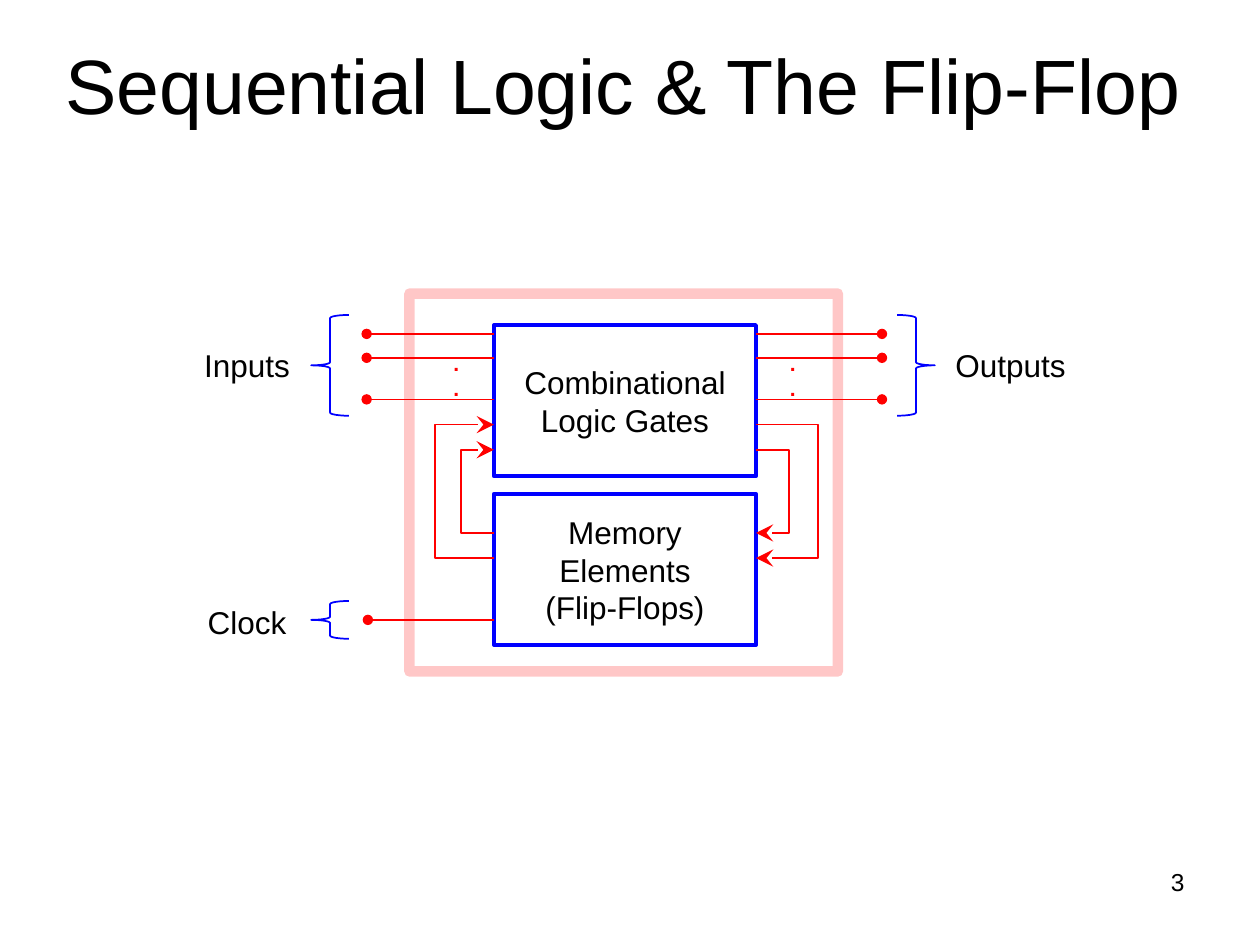
from dataclasses import dataclass

from lxml import etree
from pptx import Presentation
from pptx.dml.color import RGBColor
from pptx.enum import shapes, text
from pptx.oxml import ns
from pptx.util import Inches, Pt

BLACK, BLUE, RED = "000000", "0000FF", "FF0000"
MSO = shapes.MSO_SHAPE
CENTER, LEFT, RIGHT = text.PP_ALIGN.CENTER, text.PP_ALIGN.LEFT, text.PP_ALIGN.RIGHT
BLOCK_LEFT, BLOCK_WIDTH, BLOCK_HEIGHT = 3.92, 2.08, 1.2
BLOCK_RIGHT = BLOCK_LEFT + BLOCK_WIDTH


@dataclass
class Box:
    left: float
    top: float
    width: float
    height: float

    def emu(self) -> list:
        return [Inches(v) for v in (self.left, self.top, self.width, self.height)]


@dataclass
class Signal:
    label: str
    label_box: Box
    brace: MSO
    brace_box: Box
    block_x: float
    pin_x: float
    ys: tuple


@dataclass
class Feedback:
    block_x: float
    bend_x: float
    top: float
    bottom: float
    arrow_up: bool


def color(value: str) -> RGBColor:
    return RGBColor.from_string(value)


def write(tf, content: str, size=18, fill=BLACK, bold=False, align=CENTER,
          anchor=text.MSO_ANCHOR.TOP, wrap=True) -> None:
    tf.word_wrap = wrap
    tf.vertical_anchor = anchor
    for i, line in enumerate(content.split("\n")):
        p = tf.paragraphs[0] if i == 0 else tf.add_paragraph()
        p.alignment = align
        r = p.add_run()
        r.text = line
        r.font.name, r.font.size, r.font.bold = "Arial", Pt(size), bold
        r.font.color.rgb = color(fill)


def add_text(s, box: Box, content: str, **style) -> None:
    write(s.shapes.add_textbox(*box.emu()).text_frame, content, **style)


def add_outline(s, kind: MSO, box: Box, line: str, weight: float):
    sp = s.shapes.add_shape(kind, *box.emu())
    sp.shadow.inherit = False
    sp.fill.background()
    sp.line.color.rgb = color(line)
    sp.line.width = Pt(weight)
    return sp


def style_wire(sp, kind: str, size: str) -> None:
    sp.line.color.rgb = color(RED)
    sp.line.width = Pt(1)
    etree.SubElement(sp.line._get_or_add_ln(), ns.qn("a:tailEnd"),
                     type=kind, w=size, len=size)


def add_wire(s, block_x: float, pin_x: float, y: float) -> None:
    c = s.shapes.add_connector(shapes.MSO_CONNECTOR.STRAIGHT, Inches(block_x),
                               Inches(y), Inches(pin_x), Inches(y))
    style_wire(c, "oval", "med")
    etree.SubElement(c._element.spPr, ns.qn("a:effectLst"))


def add_signal(s, signal: Signal) -> None:
    add_outline(s, signal.brace, signal.brace_box, BLUE, 1)
    add_text(s, signal.label_box, signal.label)
    for y in signal.ys:
        add_wire(s, signal.block_x, signal.pin_x, y)


def add_feedback(s, loop: Feedback) -> None:
    start, end = (loop.bottom, loop.top) if loop.arrow_up else (loop.top, loop.bottom)
    path_points = [(loop.bend_x, start), (loop.bend_x, end), (loop.block_x, end)]
    builder = s.shapes.build_freeform(Inches(loop.block_x), Inches(start))
    builder.add_line_segments([(Inches(x), Inches(y)) for x, y in path_points],
                              close=False)
    sp = builder.convert_to_shape()
    sp.shadow.inherit = False
    sp.fill.background()
    style_wire(sp, "stealth", "lg")


def main() -> None:
    prs = Presentation()
    prs.slide_width, prs.slide_height = Inches(10), Inches(7.5)
    s = prs.slides.add_slide(prs.slide_layouts[5])

    title = s.shapes.title
    title.left, title.top, title.width, title.height = Box(-0.05, 0, 10, 1.33).emu()
    write(title.text_frame, "Sequential Logic & The Flip-Flop", size=44,
          anchor=text.MSO_ANCHOR.MIDDLE)
    add_text(s, Box(7.17, 6.83, 2.33, 0.52), "3", size=14, align=RIGHT)

    blocks = {2.58: "Combinational\nLogic Gates", 3.92: "Memory Elements\n(Flip-Flops)"}
    for top, label in blocks.items():
        sp = add_outline(s, MSO.RECTANGLE,
                         Box(BLOCK_LEFT, top, BLOCK_WIDTH, BLOCK_HEIGHT), BLUE, 2.25)
        write(sp.text_frame, label, anchor=text.MSO_ANCHOR.MIDDLE)

    data_ys = (2.65, 2.84, 3.17)
    signals = [
        Signal("Inputs", Box(1.5, 2.7, 0.92, 0.4), MSO.LEFT_BRACE,
               Box(2.47, 2.5, 0.3, 0.8), BLOCK_LEFT, 2.91, data_ys),
        Signal("Outputs", Box(7.43, 2.7, 1.18, 0.4), MSO.RIGHT_BRACE,
               Box(7.12, 2.5, 0.3, 0.8), BLOCK_RIGHT, 7, data_ys),
        Signal("Clock", Box(1.5, 4.74, 0.92, 0.4), MSO.LEFT_BRACE,
               Box(2.47, 4.77, 0.3, 0.3), BLOCK_LEFT, 2.92, (4.92,)),
    ]
    for signal in signals:
        add_signal(s, signal)
    for left in (3.5, 6.17):
        add_text(s, Box(left, 2.73, 0.25, 0.5), ".\n.", size=12, fill=RED,
                 bold=True, align=LEFT, wrap=False)

    loops = [
        Feedback(BLOCK_LEFT, 3.66, 3.57, 4.23, True),
        Feedback(BLOCK_LEFT, 3.45, 3.37, 4.43, True),
        Feedback(BLOCK_RIGHT, 6.26, 3.57, 4.23, False),
        Feedback(BLOCK_RIGHT, 6.49, 3.37, 4.43, False),
    ]
    for loop in loops:
        add_feedback(s, loop)

    frame = add_outline(s, MSO.RECTANGLE, Box(3.25, 2.33, 3.4, 3), RED, 6)
    rgb = frame.line._get_or_add_ln().find(".//" + ns.qn("a:srgbClr"))
    etree.SubElement(rgb, ns.qn("a:alpha"), val="21000")

    prs.save("out.pptx")


if __name__ == "__main__":
    main()
